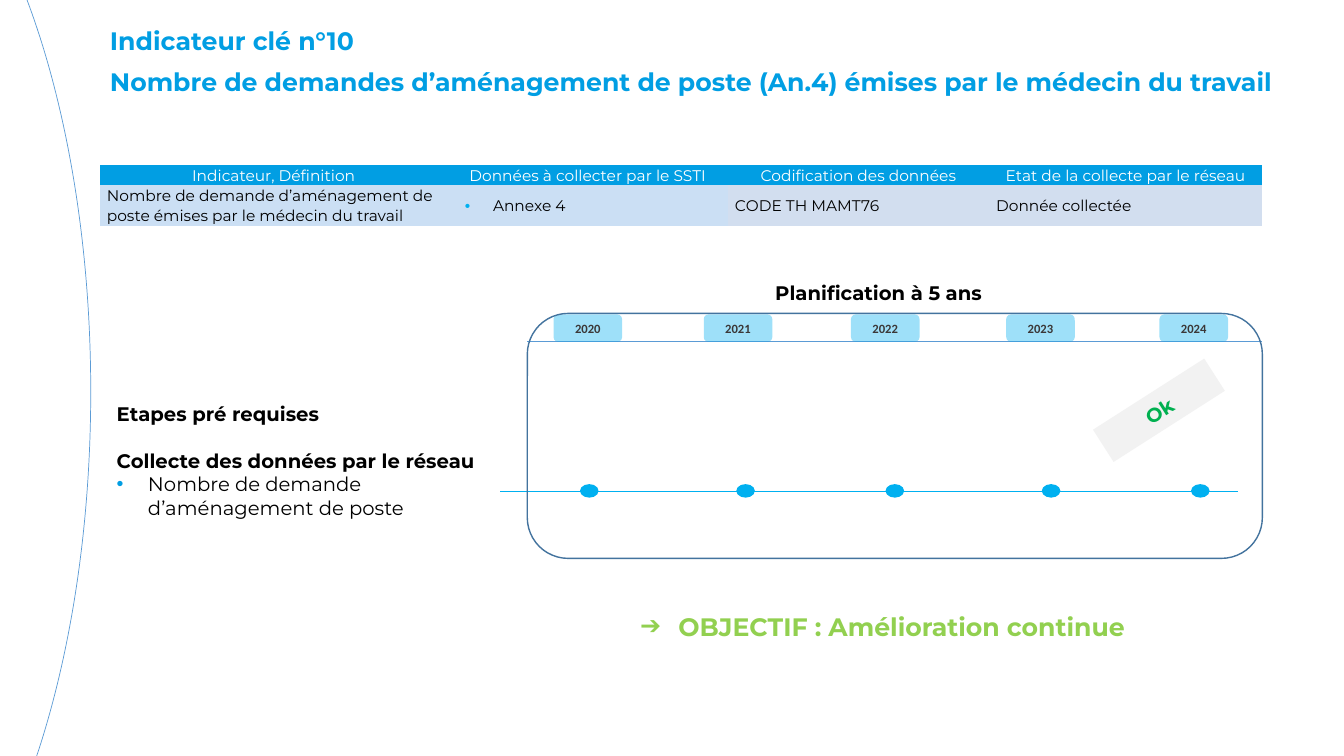
from lxml.etree import SubElement
from pptx import Presentation
from pptx.dml.color import RGBColor
from pptx.enum.shapes import MSO_CONNECTOR, MSO_SHAPE
from pptx.enum.text import MSO_ANCHOR, MSO_AUTO_SIZE, PP_ALIGN
from pptx.oxml.ns import qn
from pptx.util import Inches, Pt

COLORS = {
    "title": "019EE3", "arc": "5B9BD5", "sky": "00B0F0", "panel": "43739E",
    "cell": "CBDFF4", "cell_alt": "D2DEEF", "year": "3B3838", "lime": "92D050",
    "ok": "00B050", "tag": "F2F2F2", "black": "000000", "white": "FFFFFF",
}
FORMATS = {
    "title": {"size": Pt(18), "name": "Montserrat", "bold": True},
    "cell": {"size": Pt(11), "name": "Montserrat", "bold": False},
    "heading": {"size": Pt(14), "name": "Montserrat", "bold": True},
    "item": {"size": Pt(14), "name": "Montserrat", "bold": False},
    "year": {"size": Pt(9), "name": "Calibri", "bold": True},
}
NO_STYLE = "{2D5ABB26-0587-4C30-8999-92F81FD0307C}"


def write(para, text, style, color, align=PP_ALIGN.LEFT, spacing=1.0):
    para.alignment = align
    para.line_spacing = spacing
    span = para.add_run()
    span.text = text
    for key, value in FORMATS[style].items():
        setattr(span.font, key, value)
    span.font.color.rgb = RGBColor.from_string(COLORS[color])


def add_bullet(para, symbol, color, indent):
    props = para._p.get_or_add_pPr()
    props.set("marL", str(Inches(indent)))
    props.set("indent", str(-Inches(indent)))
    bullet_color = SubElement(props, qn("a:buClr"))
    SubElement(bullet_color, qn("a:srgbClr"), val=COLORS[color])
    SubElement(props, qn("a:buFont"), typeface="Arial")
    SubElement(props, qn("a:buChar"), char=symbol)


deck = Presentation()
deck.slide_width, deck.slide_height = Inches(13.33), Inches(7.5)
page = deck.slides.add_slide(deck.slide_layouts[5])

# Title
title = page.shapes.title
title.left, title.top = Inches(0.99), Inches(0.23)
title.width, title.height = Inches(12.08), Inches(0.85)
frame = title.text_frame
frame.auto_size = MSO_AUTO_SIZE.NONE
frame.vertical_anchor = MSO_ANCHOR.TOP
write(frame.paragraphs[0], "Indicateur clé n°10", "title", "title", spacing=0.9)
frame.paragraphs[0].space_before = Pt(0)
subtitle = frame.add_paragraph()
write(subtitle, "Nombre de demandes d’aménagement de poste (An.4) émises par le médecin du travail",
      "title", "title", spacing=0.9)
subtitle.space_before = Pt(10)

# Indicator table
ROWS = [
    ["Indicateur, Définition", "Données à collecter par le SSTI",
     "Codification des données", "Etat de la collecte par le réseau"],
    ["Nombre de demande d’aménagement de poste émises par le médecin du travail",
     "Annexe 4", "CODE TH MAMT76", "Donnée collectée"],
]
FILLS = [["title"] * 4, ["cell", "cell", "cell_alt", "cell_alt"]]
table = page.shapes.add_table(2, 4, Inches(0.99), Inches(1.64), Inches(11.53), Inches(0.6)).table
table._tbl.tblPr.find(qn("a:tableStyleId")).text = NO_STYLE
for column, width in zip(table.columns, [3.45, 2.78, 2.59, 2.71]):
    column.width = Inches(width)
for row, height in zip(table.rows, [0.2, 0.4]):
    row.height = Inches(height)
for r, texts in enumerate(ROWS):
    for c, text in enumerate(texts):
        cell = table.cell(r, c)
        cell.fill.solid()
        cell.fill.fore_color.rgb = RGBColor.from_string(COLORS[FILLS[r][c]])
        cell.vertical_anchor = MSO_ANCHOR.MIDDLE
        cell.margin_left = cell.margin_right = Inches(0.07)
        cell.margin_top = cell.margin_bottom = 0
        para = cell.text_frame.paragraphs[0]
        if text == "Annexe 4":
            add_bullet(para, "•", "sky", 0.28)
            para._p.pPr.set("marL", str(Inches(0.38)))
        write(para, text, "cell", "black" if r else "white",
              PP_ALIGN.LEFT if r else PP_ALIGN.CENTER, 1.07)

# Timeline rules
for start, end, y, color, weight in [(5.23, 12.52, 3.39, "arc", 0.5), (4.96, 12.28, 4.87, "sky", 0.25)]:
    rule = page.shapes.add_connector(MSO_CONNECTOR.STRAIGHT, Inches(start), Inches(y), Inches(end), Inches(y))
    rule.line.color.rgb = RGBColor.from_string(COLORS[color])
    rule.line.width = Pt(weight)
    SubElement(rule._element.spPr, qn("a:effectLst"))

# Side arc, year tabs, timeline panel, milestones and status tag:
# kind, left, top, width, height, fill, line, line width, text, style, colour
SHAPES = [(MSO_SHAPE.ARC, -4.42, -2.12, 5.32, 12.01, None, "arc", 0.5, "", "", "")]
for number, left in enumerate([5.49, 6.98, 8.44, 9.98, 11.5]):
    SHAPES.append((MSO_SHAPE.ROUNDED_RECTANGLE, left, 3.12, 0.68, 0.27, "sky", None, 0,
                   str(2020 + number), "year", "year"))
SHAPES.append((MSO_SHAPE.ROUNDED_RECTANGLE, 5.23, 3.11, 7.29, 2.43, None, "panel", 1, "", "", ""))
for left in [5.76, 7.31, 8.79, 10.34, 11.82]:
    SHAPES.append((MSO_SHAPE.OVAL, left, 4.81, 0.17, 0.12, "sky", "sky", 1, "", "", ""))
SHAPES.append((MSO_SHAPE.RECTANGLE, 10.84, 3.88, 1.31, 0.38, "tag", None, 0, "Ok", "heading", "ok"))

for kind, left, top, width, height, fill, line, weight, text, style, color in SHAPES:
    shape = page.shapes.add_shape(kind, Inches(left), Inches(top), Inches(width), Inches(height))
    shape.shadow.inherit = False
    if fill:
        shape.fill.solid()
        shape.fill.fore_color.rgb = RGBColor.from_string(COLORS[fill])
    else:
        shape.fill.background()
    if line:
        shape.line.color.rgb = RGBColor.from_string(COLORS[line])
        shape.line.width = Pt(weight)
    else:
        shape.line.fill.background()
    if kind == MSO_SHAPE.ARC:
        shape.adjustments[0], shape.adjustments[1] = 178.34, 35.857
    if text:
        frame = shape.text_frame
        frame.margin_top = frame.margin_bottom = 0
        frame.vertical_anchor = MSO_ANCHOR.MIDDLE
        write(frame.paragraphs[0], text, style, color, PP_ALIGN.CENTER, 1.07)
    if style == "year":
        tint = shape._element.spPr.find(qn("a:solidFill")).find(qn("a:srgbClr"))
        SubElement(tint, qn("a:alpha"), val="38000")
    if text == "Ok":
        shape.rotation = 327.4

# Required steps
steps = page.shapes.add_textbox(Inches(1.06), Inches(3.94), Inches(3.96), Inches(1.27)).text_frame
steps.word_wrap = True
write(steps.paragraphs[0], "Etapes pré requises", "heading", "black")
collection = steps.add_paragraph()
write(collection, "Collecte des données par le réseau", "heading", "black")
collection.space_before = Pt(16.5)
item = steps.add_paragraph()
add_bullet(item, "•", "title", 0.31)
write(item, "Nombre de demande d’aménagement de poste", "item", "black")

# Objective
objective = page.shapes.add_textbox(Inches(6.25), Inches(5.99), Inches(5.07), Inches(0.41)).text_frame
objective.word_wrap = True
add_bullet(objective.paragraphs[0], "➔", "lime", 0.38)
write(objective.paragraphs[0], "OBJECTIF : Amélioration continue", "title", "lime", spacing=1.07)

# Timeline heading
plan = page.shapes.add_textbox(Inches(7.59), Inches(2.73), Inches(2.57), Inches(0.34)).text_frame
plan.word_wrap = True
plan.vertical_anchor = MSO_ANCHOR.MIDDLE
write(plan.paragraphs[0], "Planification à 5 ans", "heading", "black")

deck.save("out.pptx")
